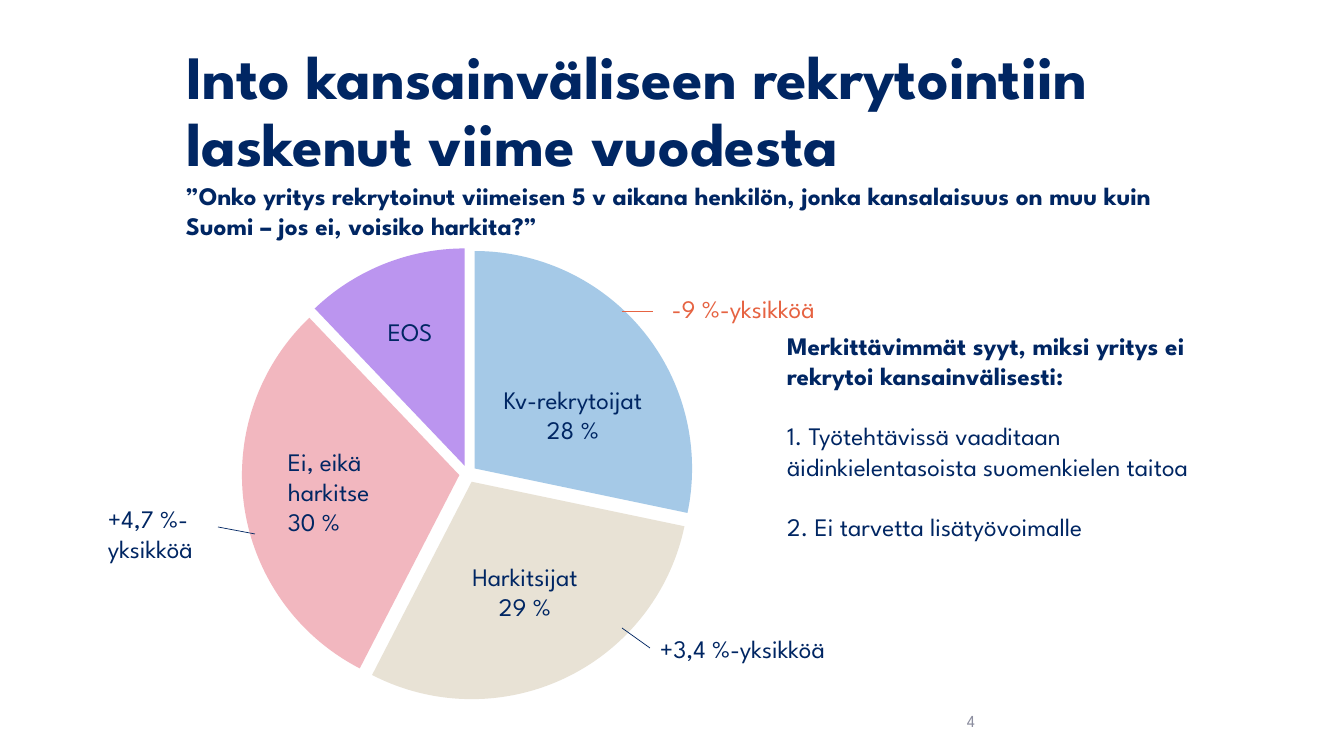
"""Build a slide about companies' interest in international recruitment."""
from lxml import etree
from pptx import Presentation
from pptx import util as u
from pptx.chart import data
from pptx.dml import color
from pptx.enum import chart as charts, shapes, text
from pptx.oxml import ns

FONT = "League Spartan"
NAVY, CORAL, GREY = "002663", "E66342", "8C8E9F"
LEFT, CENTER, RIGHT = text.PP_ALIGN.LEFT, text.PP_ALIGN.CENTER, text.PP_ALIGN.RIGHT


def px(*lengths):
    return [u.Emu(round(length * 914400 / 100.8)) for length in lengths]


def write(box, place, words, size=18, ink=NAVY, align=LEFT, bold=False):
    box.left, box.top, box.width, box.height = px(*place)
    frame = box.text_frame
    frame.text = words
    frame.word_wrap = True
    frame.auto_size = text.MSO_AUTO_SIZE.NONE
    for para in frame.paragraphs:
        para.alignment = align
        for span in para.runs:
            span.font.name = FONT
            span.font.size = u.Pt(size)
            span.font.bold = bold
            span.font.color.rgb = color.RGBColor.from_string(ink)
    return frame


deck = Presentation()
deck.slide_width, deck.slide_height = px(1344, 756)
page = deck.slides.add_slide(deck.slide_layouts[1])

title = write(page.shapes.title, (176, 40, 1067, 146),
              "Into kansainväliseen rekrytointiin laskenut viime vuodesta", 44, bold=True)
title.vertical_anchor = text.MSO_ANCHOR.MIDDLE
title.paragraphs[0].line_spacing = 0.9

shares = data.CategoryChartData()
shares.categories = ["1", "2", "3", "4"]
shares.add_series("Series 1", (28, 29, 30, 12))
pie = page.shapes.add_chart(charts.XL_CHART_TYPE.PIE, *px(-66, 234, 1068, 480), shares).chart
pie.has_title = False
pie.has_legend = False
pie.font.name = FONT
pie.font.size = u.Pt(10)
pie.font.color.rgb = color.RGBColor.from_string(NAVY)
series = pie.plots[0].series[0]
explosion = etree.Element(ns.qn("c:explosion"), val="4")
series._element.find(ns.qn("c:tx")).addnext(explosion)
for index, shade in enumerate(("A5C9E7", "E8E2D5", "F2B7BF", "BB95EF")):
    fill = series.points[index].format.fill
    fill.solid()
    fill.fore_color.rgb = color.RGBColor.from_string(shade)

reasons = write(page.placeholders[1], (777, 325, 451, 254),
                "Merkittävimmät syyt, miksi yritys ei rekrytoi kansainvälisesti:\n"
                "1. Työtehtävissä vaaditaan äidinkielentasoista suomenkielen taitoa\n"
                "2. Ei tarvetta lisätyövoimalle")
for index, para in enumerate(reasons.paragraphs):
    properties = para._p.get_or_add_pPr()
    properties.set("marL", "0")
    properties.set("indent", "0")
    etree.SubElement(properties, ns.qn("a:buNone"))
    para.space_before = u.Pt(21.6 if index else 0)
    para.runs[0].font.bold = index == 0

labels = [
    ((485, 379, 176, 72), "Kv-rekrytoijat\n28 %", NAVY, CENTER),
    ((447, 556, 156, 72), "Harkitsijat\n29 %", NAVY, CENTER),
    ((378, 311, 156, 40), "EOS", NAVY, LEFT),
    ((278, 441, 156, 102), "Ei, eikä harkitse\n30 %", NAVY, LEFT),
    ((98, 498, 156, 72), "+4,7 %-yksikköä", NAVY, LEFT),
    ((662, 288, 179, 40), "-9 %-yksikköä", CORAL, LEFT),
    ((650, 628, 207, 40), "+3,4 %-yksikköä", NAVY, LEFT),
]
for place, words, ink, align in labels:
    label = page.shapes.add_textbox(*px(*place))
    write(label, place, words, ink=ink, align=align)
considering_change = label

question = (176, 175, 1051, 72)
write(page.shapes.add_textbox(*px(*question)), question,
      "”Onko yritys rekrytoinut viimeisen 5 v aikana henkilön, jonka kansalaisuus "
      "on muu kuin Suomi – jos ei, voisiko harkita?”", bold=True)

corner = (683, 701, 302, 40)
number = write(page.shapes.add_textbox(*px(*corner)), corner, "4", 12, GREY, RIGHT)
number.vertical_anchor = text.MSO_ANCHOR.MIDDLE

leaders = [
    ((218, 527, 255, 534), NAVY),
    ((622, 311, 653, 311), CORAL),
    ((622, 628, 650, 648), NAVY),
]
for ends, ink in leaders:
    leader = page.shapes.add_connector(shapes.MSO_CONNECTOR.STRAIGHT, *px(*ends))
    leader.line.width = u.Pt(0.5)
    leader.line.color.rgb = color.RGBColor.from_string(ink)
    etree.SubElement(leader._element.spPr, ns.qn("a:effectLst"))
leader.end_connect(considering_change, 1)

deck.save("out.pptx")
